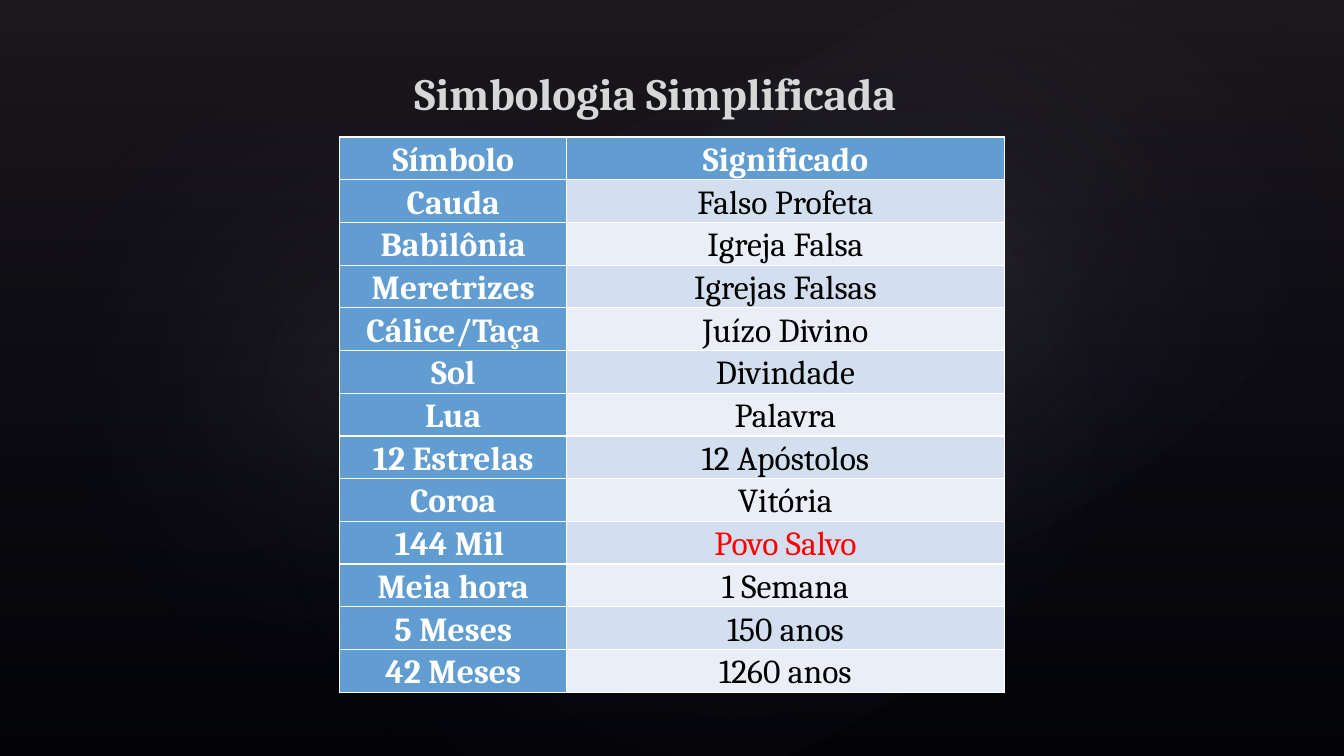
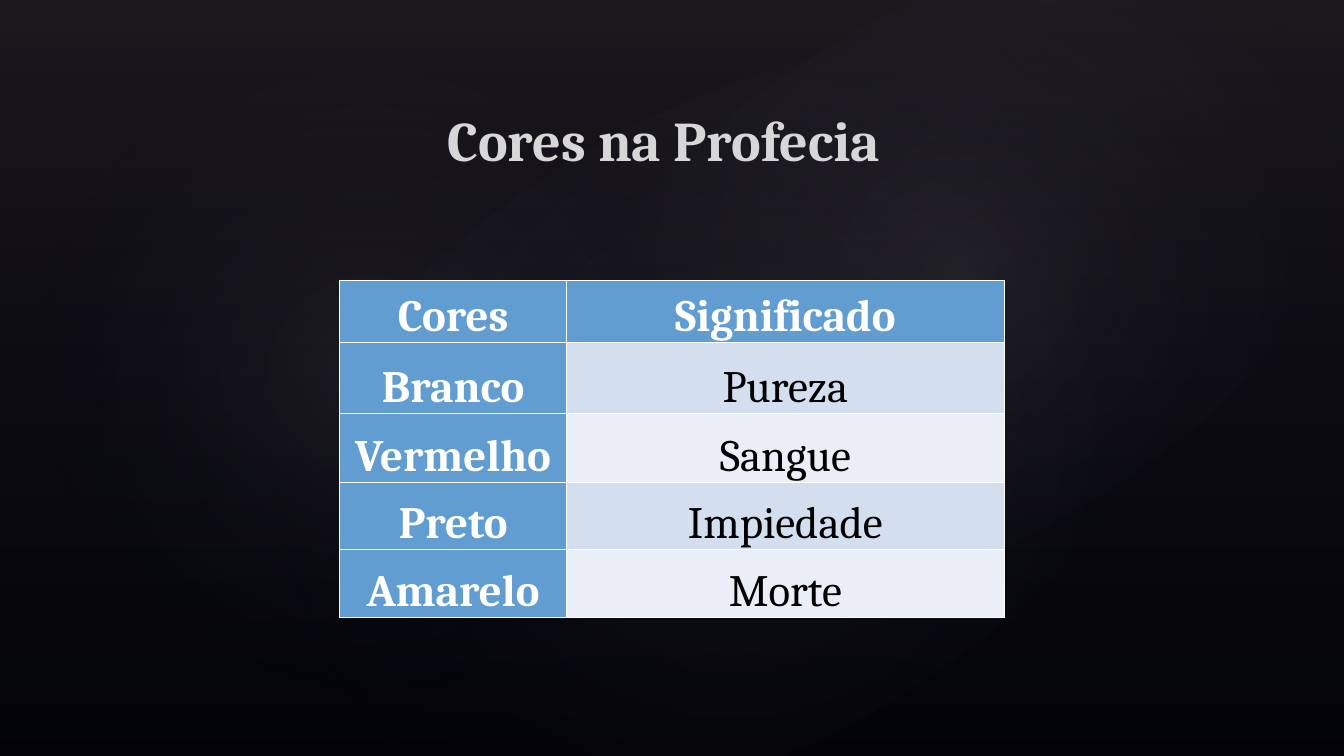
"""Builds two dark slides with tables of prophetic symbols and colours."""
from pptx import Presentation
from pptx.dml.color import RGBColor
from pptx.enum.shapes import MSO_SHAPE
from pptx.enum.text import MSO_ANCHOR, MSO_AUTO_SIZE, PP_ALIGN
from pptx.oxml import parse_xml
from pptx.oxml.ns import nsdecls, qn
from pptx.util import Inches, Pt

COLORS = {
    "backdrop": "000000", "dusk": "504652", "navy": "242852", "glow": "C4BCC6",
    "silver": "979797", "light": "D7D7D7", "white": "FFFFFF", "black": "000000",
    "red": "FF0000", "label": "629DD1", "odd": "D3DFEE", "even": "EAEFF7",
}
FONT = "Cambria"
LINEAR = '<a:lin ang="5400000" scaled="0"/>'
RADIAL = '<a:path path="circle"><a:fillToRect l="50000" t="50000" r="50000" b="50000"/></a:path>'


def color(name):
    return RGBColor.from_string(COLORS[name])


def apply_gradient(element, stops, direction):
    """Swap the element's solid fill for stops of position, colour and opacity."""
    marks = "".join(
        f'<a:gs pos="{position * 1000}"><a:srgbClr val="{COLORS[name]}">'
        f'<a:alpha val="{opacity * 1000}"/></a:srgbClr></a:gs>'
        for position, name, opacity in stops)
    solid = next(element.iter(qn("a:solidFill")))
    solid.getparent().replace(solid, parse_xml(
        f'<a:gradFill {nsdecls("a")} rotWithShape="1"><a:gsLst>{marks}</a:gsLst>'
        f'{direction}</a:gradFill>'))


deck = Presentation()
deck.slide_width, deck.slide_height = Inches(13.33), Inches(7.5)
column, row = deck.slide_width / 100, deck.slide_height / 100

layout = deck.slide_layouts[5]
layout.background.fill.solid()
layout.background.fill.fore_color.rgb = color("backdrop")
for holder in list(layout.placeholders):
    if holder.placeholder_format.idx:
        holder.element.getparent().remove(holder.element)

VEIL = [(0, "dusk", 36), (100, "navy", 10)]
FAINT = [(0, "glow", 7), (58, "navy", 0)]
SOFT = [(0, "glow", 8), (58, "navy", 0)]
backdrops = [
    (MSO_SHAPE.RECTANGLE, 0, 0, 100, 100, 0, VEIL, LINEAR),
    (MSO_SHAPE.OVAL, 15, 15.2, 79.22, 83.2, 328.7, FAINT, RADIAL),
    (MSO_SHAPE.OVAL, 4.58, 6.13, 45.46, 87.07, 294.3, SOFT, RADIAL),
    (MSO_SHAPE.OVAL, 35.86, 1.73, 70.89, 69.33, 328.7, SOFT, RADIAL),
]

slides = [
    {
        "title": "Simbologia Simplificada", "size": 32,
        "title_area": (30.08, 8, 39.91, 8.53),
        "table_top": 18.13, "heights": [5.65] * 13,
        "rows": [
            ("Símbolo", "Significado"),
            ("Cauda", "Falso Profeta"),
            ("Babilônia", "Igreja Falsa"),
            ("Meretrizes", "Igrejas Falsas"),
            ("Cálice/Taça", "Juízo Divino"),
            ("Sol", "Divindade"),
            ("Lua", "Palavra"),
            ("12 Estrelas", "12 Apóstolos"),
            ("Coroa", "Vitória"),
            ("144 Mil ", "Povo Salvo"),
            ("Meia hora", "1 Semana"),
            ("5 Meses", "150 anos"),
            ("42 Meses", "1260 anos"),
        ],
    },
    {
        "title": "Cores na Profecia", "size": 40,
        "title_area": (32.56, 13.33, 34.96, 10.27),
        "table_top": 37.07, "heights": [8.27, 9.33, 9.2, 8.8, 9.07],
        "rows": [
            ("Cores", "Significado"),
            ("Branco", "Pureza"),
            ("Vermelho", "Sangue"),
            ("Preto", "Impiedade"),
            ("Amarelo", "Morte"),
        ],
    },
]
TABLE_LEFT = 25.28
TABLE_COLUMNS = [16.88, 32.56]
HIGHLIGHT = "Povo Salvo"

for number, content in enumerate(slides):
    page = deck.slides.add_slide(layout)

    if number == 0:
        for order, (kind, left, top, width, height, angle, stops, direction) in enumerate(backdrops):
            shape = page.shapes.add_shape(kind, int(left * column), int(top * row),
                                          int(width * column), int(height * row))
            shape.rotation = angle
            shape.shadow.inherit = False
            shape.line.fill.background()
            shape.fill.solid()
            shape.fill.fore_color.rgb = color("navy")
            apply_gradient(shape.element, stops, direction)
            layout.shapes.element.insert(2 + order, shape.element)

    title = page.shapes.title
    left, top, width, height = content["title_area"]
    title.left, title.top = int(left * column), int(top * row)
    title.width, title.height = int(width * column), int(height * row)
    frame = title.text_frame
    frame.text = content["title"]
    frame.word_wrap = False
    frame.auto_size = MSO_AUTO_SIZE.SHAPE_TO_FIT_TEXT
    frame.vertical_anchor = MSO_ANCHOR.TOP
    para = frame.paragraphs[0]
    para.alignment = PP_ALIGN.LEFT
    span = para.runs[0]
    span.font.name, span.font.size, span.font.bold = FONT, Pt(content["size"]), True
    span.font.fill.solid()
    span.font.fill.fore_color.rgb = color("light")
    apply_gradient(title.element, [(0, "silver", 100), (26, "light", 100), (100, "white", 100)], LINEAR)

    table = page.shapes.add_table(
        len(content["rows"]), len(TABLE_COLUMNS),
        int(TABLE_LEFT * column), int(content["table_top"] * row),
        int(sum(TABLE_COLUMNS) * column), int(sum(content["heights"]) * row)).table
    table.first_col = True
    for index, width in enumerate(TABLE_COLUMNS):
        table.columns[index].width = int(width * column)

    for line, (texts, height) in enumerate(zip(content["rows"], content["heights"])):
        table.rows[line].height = int(height * row)
        for index, text in enumerate(texts):
            cell = table.cell(line, index)
            is_label = line == 0 or index == 0
            cell.fill.solid()
            cell.fill.fore_color.rgb = color("label" if is_label else "odd" if line % 2 else "even")
            cell.vertical_anchor = MSO_ANCHOR.BOTTOM
            cell.margin_left = cell.margin_right = Inches(0.05)
            cell.margin_top = cell.margin_bottom = 0
            cell.text = text
            para = cell.text_frame.paragraphs[0]
            para.alignment = PP_ALIGN.CENTER
            para.font.name, para.font.size = FONT, Pt(content["size"] - 8)
            para.font.bold = is_label
            para.font.color.rgb = color(
                "white" if is_label else "red" if text == HIGHLIGHT else "black")

deck.save("out.pptx")
